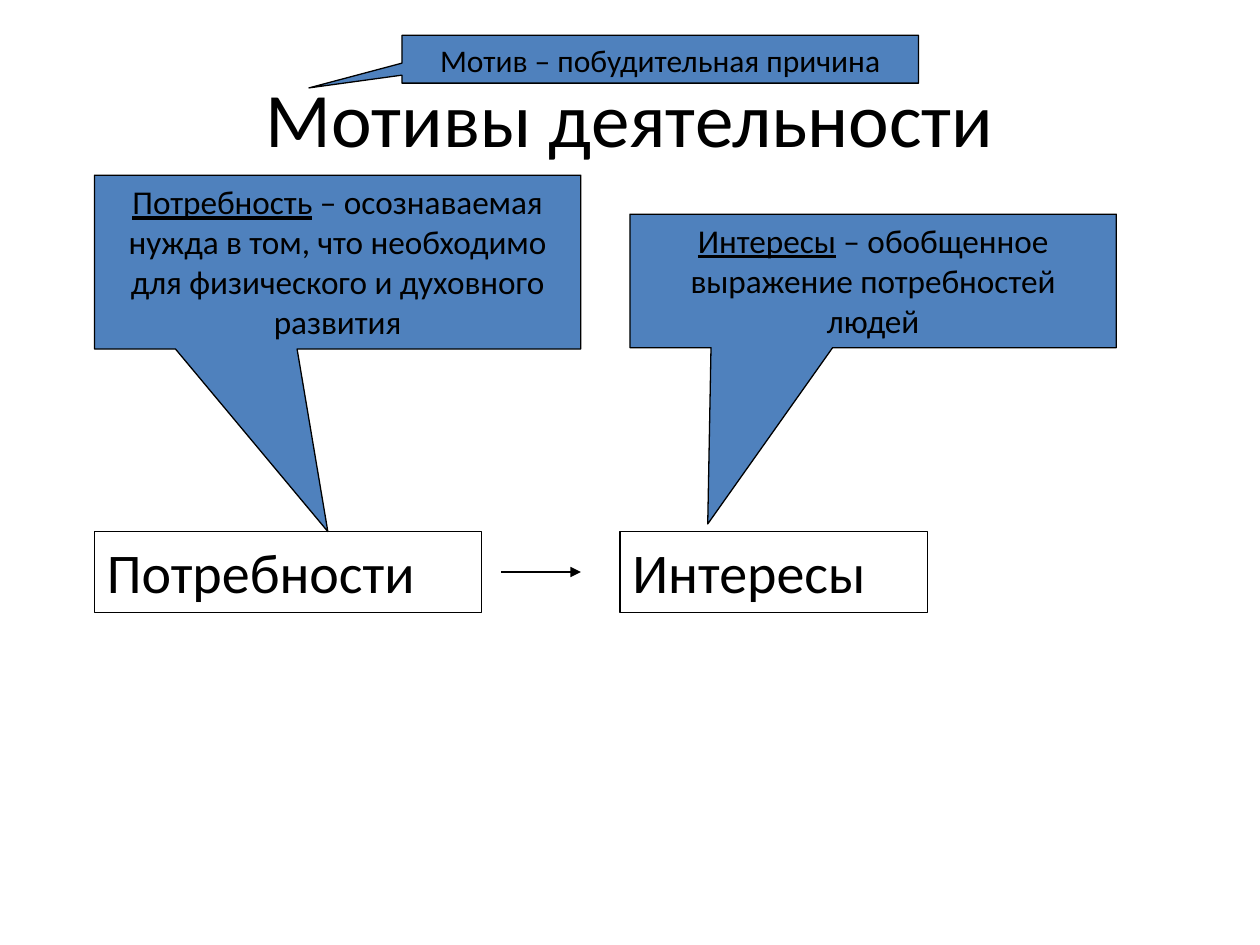
from lxml import etree
from pptx import Presentation
from pptx import util as u
from pptx.dml.color import RGBColor
from pptx.enum import shapes, text
from pptx.oxml.ns import qn

BLACK, BLUE = "000000", "4F81BD"
MID, TOP = text.MSO_ANCHOR.MIDDLE, text.MSO_ANCHOR.TOP
LEFT, CENTER = text.PP_ALIGN.LEFT, text.PP_ALIGN.CENTER

TITLE = "Мотивы деятельности"
# box, tail tip relative to the box, size, underlined term, rest
MOTIVE = ((3.19, 0.28, 4.1, 0.38), (-0.68, 0.6), 18,
          "", "Мотив – побудительная причина")
NOTES = [
    ((0.75, 1.39, 3.86, 1.38), (-0.02, 1.55), 19, "Потребность",
     " – осознаваемая нужда в том, что необходимо для физического и духовного развития"),
    ((5, 1.7, 3.86, 1.06), (-0.34, 1.82), 19, "Интересы",
     " – обобщенное выражение потребностей людей"),
]
TERMS = [("Потребности", 0.75, 3.07), ("Интересы", 4.92, 2.44)]
TERM_TOP, TERM_HIGH = 4.22, 0.64
ARROW = (3.98, 4.61)


def color(code):
    return RGBColor.from_string(code)


def inches(box):
    return [u.Inches(v) for v in box]


def write(shape, words, size, term="", align=CENTER, anchor=TOP):
    """Fill the shape with an optional underlined term, then the words."""
    frame = shape.text_frame
    frame.word_wrap = True
    frame.vertical_anchor = anchor
    para = frame.paragraphs[0]
    para.alignment = align
    for part in filter(None, (term, words)):
        run = para.add_run()
        run.text = part
        font = run.font
        font.name, font.size = "Calibri", u.Pt(size)
        font.color.rgb = color(BLACK)
        if part == term:
            font.underline = True


def stroke(shape):
    shape.line.color.rgb = color(BLACK)
    shape.line.width = u.Pt(0.75)


def add_box(slide, kind, box, fill=None):
    shape = slide.shapes.add_shape(kind, *inches(box))
    shape.shadow.inherit = False
    if fill:
        shape.fill.solid()
        shape.fill.fore_color.rgb = color(fill)
    else:
        shape.fill.background()
    stroke(shape)
    return shape


def add_note(slide, box, tip, size, term, words):
    note = add_box(slide, shapes.MSO_SHAPE.RECTANGULAR_CALLOUT, box, BLUE)
    for i, value in enumerate(tip):
        note.adjustments[i] = value
    write(note, words, size, term)


def add_arrow(slide, start, end, y):
    line = slide.shapes.add_connector(
        shapes.MSO_CONNECTOR.STRAIGHT, *inches((start, y, end, y)))
    stroke(line)
    etree.SubElement(line.line._get_or_add_ln(), qn("a:tailEnd"), type="triangle")
    etree.SubElement(line._element.spPr, qn("a:effectLst"))


def main():
    deck = Presentation()
    deck.slide_width, deck.slide_height = inches((10, 7.5))
    slide = deck.slides.add_slide(deck.slide_layouts[6])

    title = slide.shapes.add_textbox(*inches((0.5, 0.3, 9, 1.25)))
    write(title, TITLE, 44, anchor=MID)
    add_note(slide, *MOTIVE)
    for name, left, width in TERMS:
        box = add_box(slide, shapes.MSO_SHAPE.RECTANGLE,
                      (left, TERM_TOP, width, TERM_HIGH))
        write(box, name, 32, align=LEFT)
    add_arrow(slide, *ARROW, TERM_TOP + TERM_HIGH / 2)
    for note in NOTES:
        add_note(slide, *note)
    deck.save("out.pptx")


if __name__ == "__main__":
    main()
